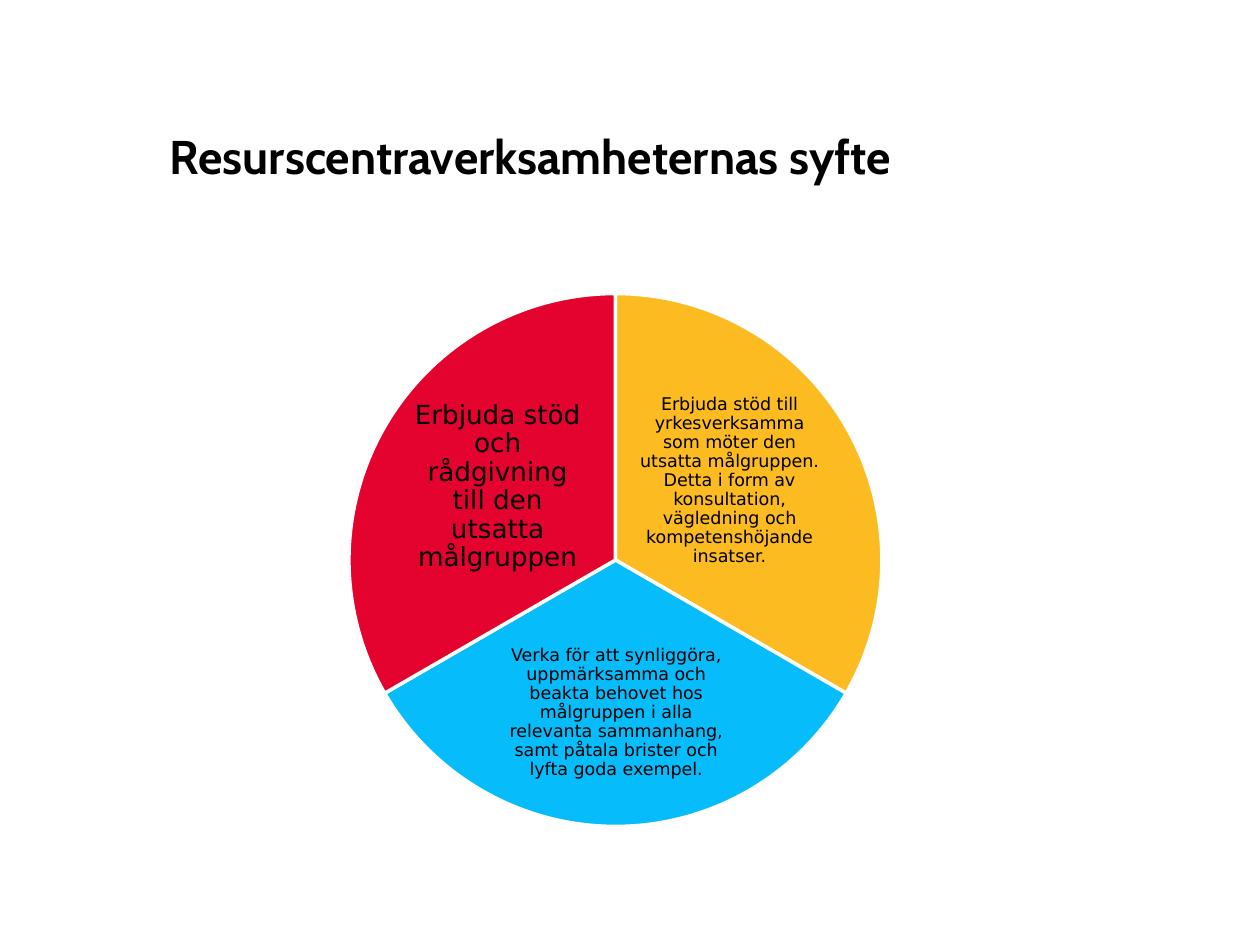
from dataclasses import dataclass

from pptx import Presentation
from pptx.dml.color import RGBColor
from pptx.enum.shapes import MSO_SHAPE
from pptx.enum.text import MSO_ANCHOR, MSO_AUTO_SIZE, PP_ALIGN
from pptx.slide import Slide
from pptx.text.text import TextFrame
from pptx.util import Inches, Pt

PIE_LEFT, PIE_TOP, PIE_SIZE = 2.77, 2.33, 4.23
DEGREE = 0.6


@dataclass
class Sector:
    """A third of the circle with its label."""
    start: int
    color: str
    text: str
    box: tuple[float, float, float, float]
    size: int = 10
    inset: float = 0.01


SECTORS = [
    Sector(270, "FBBB21",
           "Erbjuda stöd till yrkesverksamma som möter den utsatta målgruppen. "
           "Detta i form av konsultation, vägledning och kompetenshöjande insatser.",
           (5.07, 3.11, 1.44, 1.41)),
    Sector(30, "06BCFB",
           "Verka för att synliggöra, uppmärksamma och beakta behovet hos målgruppen "
           "i alla relevanta sammanhang, samt påtala brister och lyfta goda exempel.",
           (3.93, 5, 1.92, 1.31)),
    Sector(150, "E4032E",
           "Erbjuda stöd och rådgivning till den utsatta målgruppen",
           (3.23, 3.16, 1.44, 1.41), 15, 0.02),
]


def rgb(value: str) -> RGBColor:
    """Turn a hex string into a colour."""
    return RGBColor.from_string(value)


def write_text(frame: TextFrame, text: str, font_name: str, size: int,
               anchor: MSO_ANCHOR, inset: float = 0, bold: bool = False,
               line_spacing: float = 1.0) -> None:
    """Fill a text frame with one centred paragraph."""
    frame.word_wrap = True
    frame.auto_size = MSO_AUTO_SIZE.NONE
    frame.vertical_anchor = anchor
    frame.margin_left = frame.margin_right = Inches(inset)
    frame.margin_top = frame.margin_bottom = Inches(inset)
    paragraph = frame.paragraphs[0]
    paragraph.alignment = PP_ALIGN.CENTER
    paragraph.line_spacing = line_spacing
    run = paragraph.add_run()
    run.text = text
    run.font.name = font_name
    run.font.size = Pt(size)
    run.font.bold = bold
    run.font.color.rgb = rgb("000000")


def add_title(slide: Slide, text: str) -> None:
    """Place and format the title placeholder."""
    title = slide.shapes.title
    title.left, title.top = Inches(0.59), Inches(1.03)
    title.width, title.height = Inches(7.24), Inches(0.43)
    write_text(title.text_frame, text, "Cabin", 27, MSO_ANCHOR.BOTTOM, bold=True)


def add_sector(slide: Slide, sector: Sector) -> None:
    """Draw one sector of the circle and its label."""
    shape = slide.shapes.add_shape(
        MSO_SHAPE.PIE, Inches(PIE_LEFT), Inches(PIE_TOP), Inches(PIE_SIZE), Inches(PIE_SIZE))
    shape.adjustments[0] = sector.start * DEGREE
    shape.adjustments[1] = (sector.start + 120) % 360 * DEGREE
    shape.shadow.inherit = False
    shape.fill.solid()
    shape.fill.fore_color.rgb = rgb(sector.color)
    shape.line.color.rgb = rgb("FFFFFF")
    shape.line.width = Pt(2)
    label = slide.shapes.add_textbox(*(Inches(length) for length in sector.box))
    write_text(label.text_frame, sector.text, "DejaVu Sans", sector.size,
               MSO_ANCHOR.MIDDLE, sector.inset, line_spacing=0.9)


def main() -> None:
    """Build and save the presentation."""
    presentation = Presentation()
    presentation.slide_width, presentation.slide_height = Inches(10), Inches(7.5)
    slide = presentation.slides.add_slide(presentation.slide_layouts[5])
    add_title(slide, "Resurscentraverksamheternas syfte")
    for sector in SECTORS:
        add_sector(slide, sector)
    presentation.save("out.pptx")


if __name__ == "__main__":
    main()
